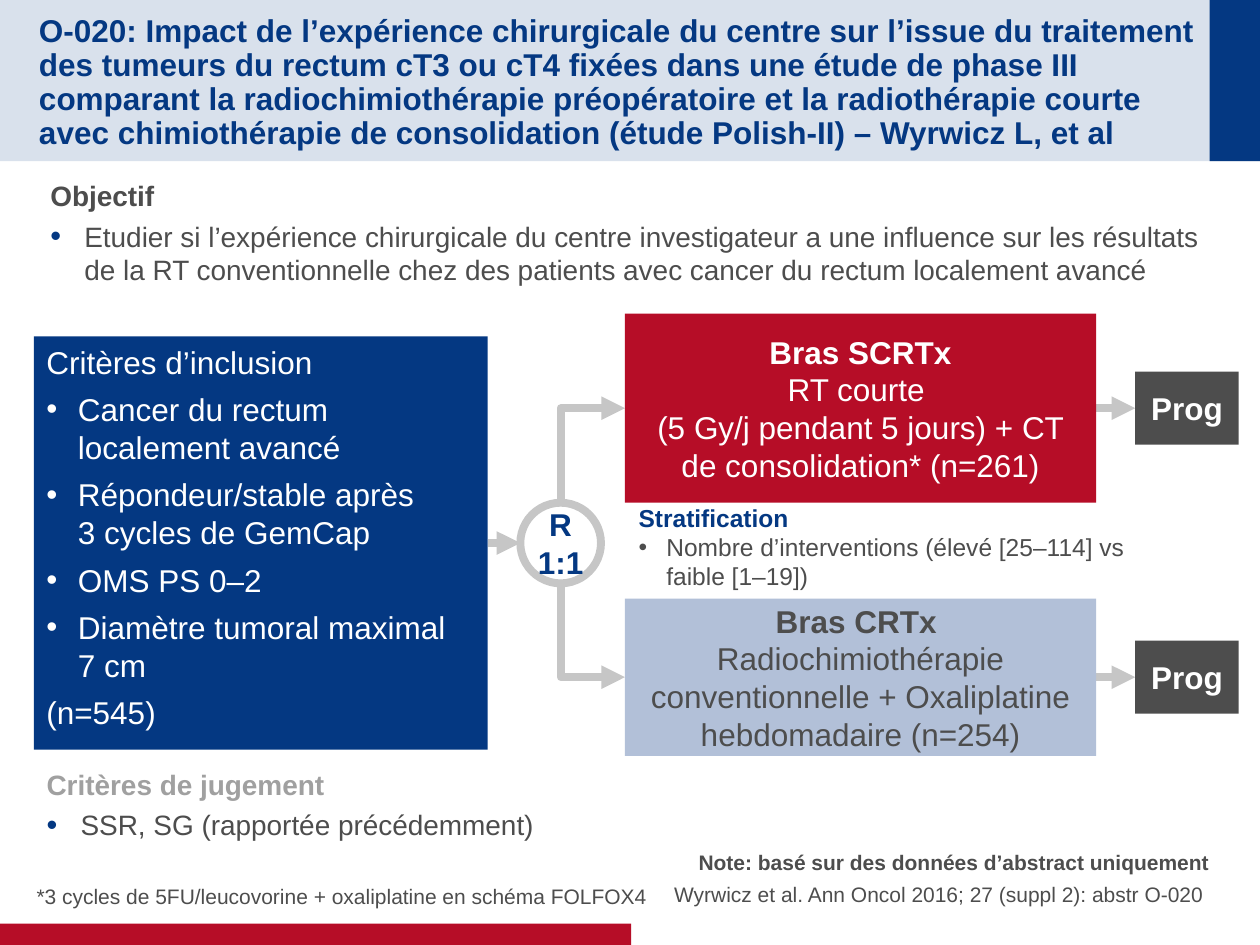
"""Build the trial design slide with its two treatment arms."""
from pptx import Presentation
from pptx.dml.color import RGBColor
from pptx.enum.dml import MSO_LINE
from pptx.enum.shapes import MSO_CONNECTOR, MSO_SHAPE
from pptx.enum.text import MSO_ANCHOR, PP_ALIGN
from pptx.oxml.ns import qn
from pptx.util import Inches, Pt
from lxml.etree import SubElement

NAVY = RGBColor(0x04, 0x38, 0x82)
PALE = RGBColor(0xD9, 0xE1, 0xEC)
RED = RGBColor(0xB6, 0x0D, 0x27)
BLUE = RGBColor(0xB2, 0xC0, 0xD8)
DARK = RGBColor(0x4D, 0x4D, 0x4D)
GREY = RGBColor(0xA0, 0xA0, 0xA0)
SILVER = RGBColor(0xC6, 0xC6, 0xC6)
WHITE = RGBColor(0xFF, 0xFF, 0xFF)


class TrialSlide:
    font = "Arial"
    line_width = Pt(4.5)

    def __init__(self, prs):
        self.s = prs.slides.add_slide(prs.slide_layouts[6])

    def shape(self, x, y, w, h, fill=None, line=None, kind=MSO_SHAPE.RECTANGLE):
        sp = self.s.shapes.add_shape(kind, *map(Inches, (x, y, w, h)))
        sp.shadow.inherit = False
        if fill is None:
            sp.fill.background()
        else:
            sp.fill.solid()
            sp.fill.fore_color.rgb = fill
        if line is None:
            sp.line.fill.background()
        else:
            sp.line.color.rgb = line
            sp.line.width = self.line_width
        return sp

    def box(self, x, y, w, h):
        return self.s.shapes.add_textbox(*map(Inches, (x, y, w, h)))

    def label(self, sp, paras, size, color, insets=(0.1, 0.05), anchor=MSO_ANCHOR.TOP,
              align=PP_ALIGN.LEFT, after=0, spacing=None, wrap=True):
        tf = sp.text_frame
        tf.word_wrap = wrap
        tf.vertical_anchor = anchor
        tf.margin_left = tf.margin_right = Inches(insets[0])
        tf.margin_top = tf.margin_bottom = Inches(insets[1])
        for i, (text, style) in enumerate(paras):
            p = tf.add_paragraph() if i else tf.paragraphs[0]
            p.text = text
            p.alignment = align
            p.space_after = Pt(after)
            if spacing:
                p.line_spacing = spacing
            for r in p.runs:
                r.font.name = self.font
                r.font.size = Pt(size)
                r.font.bold = style.get("bold", False)
                r.font.color.rgb = style.get("color", color)
            if "indent" in style:
                self.bullet(p, style["indent"], style.get("mark"))

    def bullet(self, p, indent, mark):
        pPr = p._p.get_or_add_pPr()
        pPr.set("marL", str(Inches(indent)))
        pPr.set("indent", str(-Inches(indent)))
        if mark is not None:
            clr = SubElement(pPr, qn("a:buClr"))
            SubElement(clr, qn("a:srgbClr"), val=str(mark))
            SubElement(pPr, qn("a:buSzPct"), val="110000")
        SubElement(pPr, qn("a:buFont"), typeface=self.font)
        SubElement(pPr, qn("a:buChar"), char="•")

    def arrow(self, x1, y1, x2, y2, kind=MSO_CONNECTOR.STRAIGHT, dash=None):
        c = self.s.shapes.add_connector(kind, *map(Inches, (x1, y1, x2, y2)))
        c.line.color.rgb = SILVER
        c.line.width = self.line_width
        if dash:
            c.line.dash_style = dash
        spPr = c._element.spPr
        SubElement(spPr.get_or_add_ln(), qn("a:tailEnd"), type="triangle")
        SubElement(spPr, qn("a:effectLst"))
        return c

    def elbow(self, x1, y1, x2, y2):
        cx, cy = (x1 + x2) / 2, (y1 + y2) / 2
        half_w, half_h = abs(y2 - y1) / 2, (x2 - x1) / 2
        down = y2 > y1
        if not down:
            half_h = -half_h
        c = self.arrow(cx + half_w, cy - half_h, cx - half_w, cy + half_h, MSO_CONNECTOR.ELBOW)
        spPr = c._element.spPr
        spPr.find(qn("a:xfrm")).set("rot", str((270 if down else 90) * 60000))
        spPr.find(qn("a:prstGeom")).set("prst", "bentConnector2")

    def arm(self, y, h, fill, color, name, treatment, dash=None):
        mid = y + h / 2
        centred = dict(insets=(0.1, 0), anchor=MSO_ANCHOR.MIDDLE, align=PP_ALIGN.CENTER)
        self.elbow(4.45, 3.99 if mid < 4.31 else 4.63, 4.96, mid)
        self.arrow(8.7, mid, 9.01, mid, dash=dash)
        self.label(self.shape(4.96, y, 3.74, h, fill),
                   [(name, {"bold": True}), (treatment, {})], 18, color, **centred)
        self.label(self.shape(9.01, mid - 0.29, 0.82, 0.58, DARK),
                   [("Prog", {"bold": True})], 18, WHITE, **centred)


def main():
    prs = Presentation()
    prs.slide_width, prs.slide_height = Inches(10), Inches(7.5)
    s = TrialSlide(prs)
    bold = {"bold": True}
    marked = {"indent": 0.27, "mark": NAVY}
    item = {"indent": 0.25}

    s.shape(0, 0, 10, 1.28, PALE)
    s.shape(9.6, 0, 0.4, 1.28, NAVY)
    s.shape(0, 7.33, 5.01, 0.17, RED)
    s.label(s.box(0.31, 0.22, 9.2, 0.88), [(
        "O-020: Impact de l’expérience chirurgicale du centre sur l’issue du traitement des "
        "tumeurs du rectum cT3 ou cT4 fixées dans une étude de phase III comparant la "
        "radiochimiothérapie préopératoire et la radiothérapie courte avec chimiothérapie de "
        "consolidation (étude Polish-II) – Wyrwicz L, et al", bold)],
        18, NAVY, (0, 0), MSO_ANCHOR.MIDDLE, spacing=0.9)

    s.label(s.box(0.4, 1.37, 9.2, 1), [
        ("Objectif", bold),
        ("Etudier si l’expérience chirurgicale du centre investigateur a une influence sur les "
         "résultats de la RT conventionnelle chez des patients avec cancer du rectum localement "
         "avancé", marked)], 16, DARK, (0, 0.05), after=4)
    s.label(s.box(0.37, 6.04, 4.52, 0.42), [
        ("Critères de jugement", {"bold": True, "color": GREY}),
        ("SSR, SG (rapportée précédemment)", marked)], 16, DARK, (0, 0.05), after=4)

    s.label(s.shape(0.27, 2.67, 3.6, 3.28, NAVY), [
        ("Critères d’inclusion", {}),
        ("Cancer du rectum localement avancé", item),
        ("Répondeur/stable après \v3 cycles de GemCap", item),
        ("OMS PS 0–2", item),
        ("Diamètre tumoral maximal \v7 cm", item),
        ("(n=545)", {})], 18, WHITE, after=5.5)
    s.arrow(3.87, 4.31, 4.13, 4.31)
    s.label(s.shape(4.13, 3.99, 0.64, 0.64, line=SILVER, kind=MSO_SHAPE.OVAL),
            [("R", bold), ("1:1", bold)], 18, NAVY,
            anchor=MSO_ANCHOR.MIDDLE, align=PP_ALIGN.CENTER, wrap=False)

    s.arm(2.49, 1.5, RED, WHITE, "Bras SCRTx",
          "RT courte \v(5 Gy/j pendant 5 jours) + CT de consolidation* (n=261)")
    s.label(s.box(4.97, 3.94, 4.26, 0.98), [
        ("Stratification", {"bold": True, "color": NAVY}),
        ("Nombre d’interventions (élevé [25–114] vs faible [1–19])", {"indent": 0.22})], 14, DARK)
    s.arm(4.75, 1.25, BLUE, DARK, "Bras CRTx ",
          "Radiochimiothérapie conventionnelle + Oxaliplatine hebdomadaire (n=254)",
          MSO_LINE.SQUARE_DOT)

    s.label(s.box(0.29, 6.68, 4.88, 0.53),
            [("*3 cycles de 5FU/leucovorine + oxaliplatine en schéma FOLFOX4", {})],
            12, DARK, (0, 0), MSO_ANCHOR.BOTTOM, after=4)
    s.label(s.box(5.08, 6.67, 4.52, 0.53), [
        ("Note: basé sur des données d’abstract uniquement", bold),
        ("Wyrwicz et al. Ann Oncol 2016; 27 (suppl 2): abstr O-020 ", {})],
        12, DARK, (0, 0), MSO_ANCHOR.BOTTOM, PP_ALIGN.RIGHT, after=4)
    prs.save("out.pptx")


if __name__ == "__main__":
    main()
